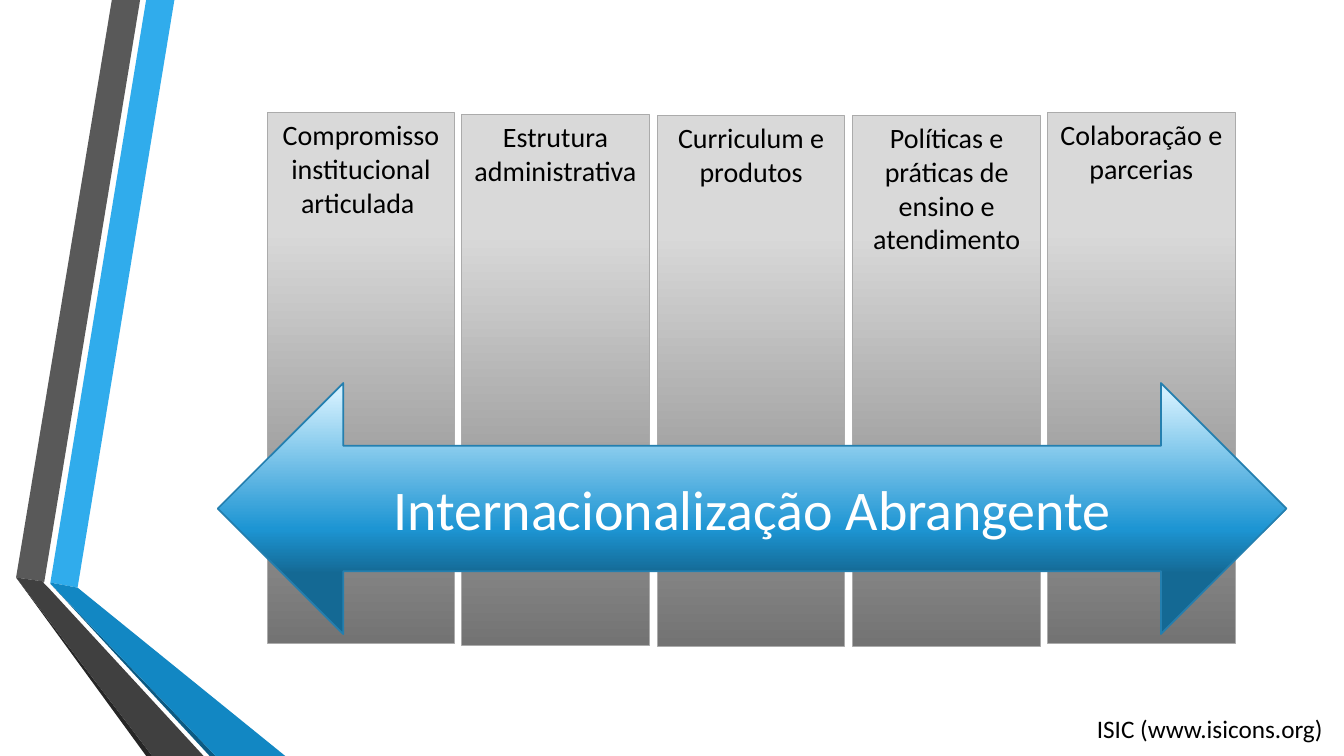
from lxml.etree import SubElement
from pptx import Presentation
from pptx.dml.color import RGBColor as RGB
from pptx.enum.shapes import MSO_SHAPE as SHAPE
from pptx.enum.text import MSO_ANCHOR as ANCHOR, MSO_AUTO_SIZE as AUTO, PP_ALIGN as ALIGN
from pptx.oxml.ns import qn
from pptx.util import Pt

PX = 9144  # EMU per px, 100 px to the inch
BLACK, WHITE = RGB(0, 0, 0), RGB(255, 255, 255)
SKY, BLUE, NAVY = RGB(0x30, 0xAC, 0xEC), RGB(0x12, 0x87, 0xC3), RGB(0x0C, 0x5A, 0x82)
GRAY, DARK, COAL = RGB(0x59, 0x59, 0x59), RGB(0x40, 0x40, 0x40), RGB(0x26, 0x26, 0x26)
EDGE, RIM = RGB(0xAB, 0xAB, 0xAB), RGB(0x24, 0x7F, 0xAF)
STEEL = [(22, RGB(0xD9, 0xD9, 0xD9)), (100, RGB(0x73, 0x73, 0x73))]
WATER = [(24, RGB(0x14, 0x69, 0x94)), (42, RGB(0x1D, 0x95, 0xD3)),
         (96, RGB(0xD1, 0xEF, 0xFE))]

BANDS = [
    (SKY, [(50, 578), (77, 583), (173, 0), (145, 0)]),
    (GRAY, [(139, 0), (111, 0), (16, 573), (44, 577)]),
    (COAL, [(16, 573), (145, 750), (151, 750)]),
    (NAVY, [(50, 579), (208, 750), (214, 750)]),
    (BLUE, [(50, 579), (214, 750), (283, 750), (77, 583), (50, 578)]),
    (DARK, [(202, 750), (48, 583), (43, 578), (44, 577), (16, 573), (151, 750)]),
]
PILLARS = [  # top, label
    (112, "Compromisso institucional articulada "),
    (114, "Estrutura administrativa"),
    (115, "Curriculum e produtos"),
    (115, "Políticas e práticas de ensino e atendimento"),
    (112, "Colaboração e parcerias"),
]
LEFT, LAST, WIDE, TALL = 265, 1039, 186, 526
ARROW = "Internacionalização Abrangente"
SOURCE = "ISIC (www.isicons.org)"


def place(shape, *box):
    shape.left, shape.top, shape.width, shape.height = [v * PX for v in box]


def shade(shape, stops, angle):
    """Fill with a linear gradient; the angle runs counter-clockwise."""
    shape.fill.gradient()
    shape.fill.gradient_angle = angle
    group = shape._element.spPr.find(".//" + qn("a:gsLst"))
    for old in list(group):
        group.remove(old)
    for pos, color in stops:
        stop = SubElement(group, qn("a:gs"), pos=str(pos * 1000))
        SubElement(stop, qn("a:srgbClr"), val=str(color))


def outline(shape, color, width):
    shape.line.color.rgb = color
    shape.line.width = Pt(width)


def write(shape, text, size, color, align=ALIGN.CENTER, anchor=ANCHOR.TOP, wrap=True):
    frame = shape.text_frame
    frame.auto_size = AUTO.NONE if wrap else AUTO.SHAPE_TO_FIT_TEXT
    frame.word_wrap = wrap
    frame.vertical_anchor = anchor
    para = frame.paragraphs[0]
    para.alignment = align
    run = para.add_run()
    run.text = text
    run.font.name = "Calibri"
    run.font.size = Pt(size)
    run.font.color.rgb = color


def main():
    deck = Presentation()
    deck.slide_width, deck.slide_height = 1333 * PX, 750 * PX
    slide = deck.slides.add_slide(deck.slide_layouts[5])
    shapes = slide.shapes

    for color, points in BANDS:
        pen = shapes.build_freeform(*points[0], scale=PX)
        pen.add_line_segments(points[1:], close=True)
        band = pen.convert_to_shape()
        band.shadow.inherit = False
        band.fill.solid()
        band.fill.fore_color.rgb = color
        band.line.fill.background()

    step = (LAST - LEFT) / (len(PILLARS) - 1)
    for i, (top, label) in enumerate(PILLARS):
        if i == 0:
            pillar = shapes.title
        else:
            pillar = shapes.add_shape(SHAPE.RECTANGLE, 0, 0, PX, PX)
            pillar.shadow.inherit = False
        place(pillar, round(LEFT + i * step), top, WIDE, TALL)
        shade(pillar, STEEL, 270)
        outline(pillar, EDGE, 0.75)
        write(pillar, label, 20, BLACK)

    arrow = shapes.add_shape(SHAPE.LEFT_RIGHT_ARROW, 0, 0, PX, PX)
    arrow.shadow.inherit = False
    place(arrow, 216, 380, 1060, 249)
    shade(arrow, WATER, 90)
    outline(arrow, RIM, 1.25)
    write(arrow, ARROW, 40, WHITE, anchor=ANCHOR.MIDDLE)

    note = shapes.add_textbox(0, 0, PX, PX)
    place(note, 1078, 703, 251, 40)
    write(note, SOURCE, 18, BLACK, align=ALIGN.LEFT, wrap=False)
    deck.save("out.pptx")


if __name__ == "__main__":
    main()
